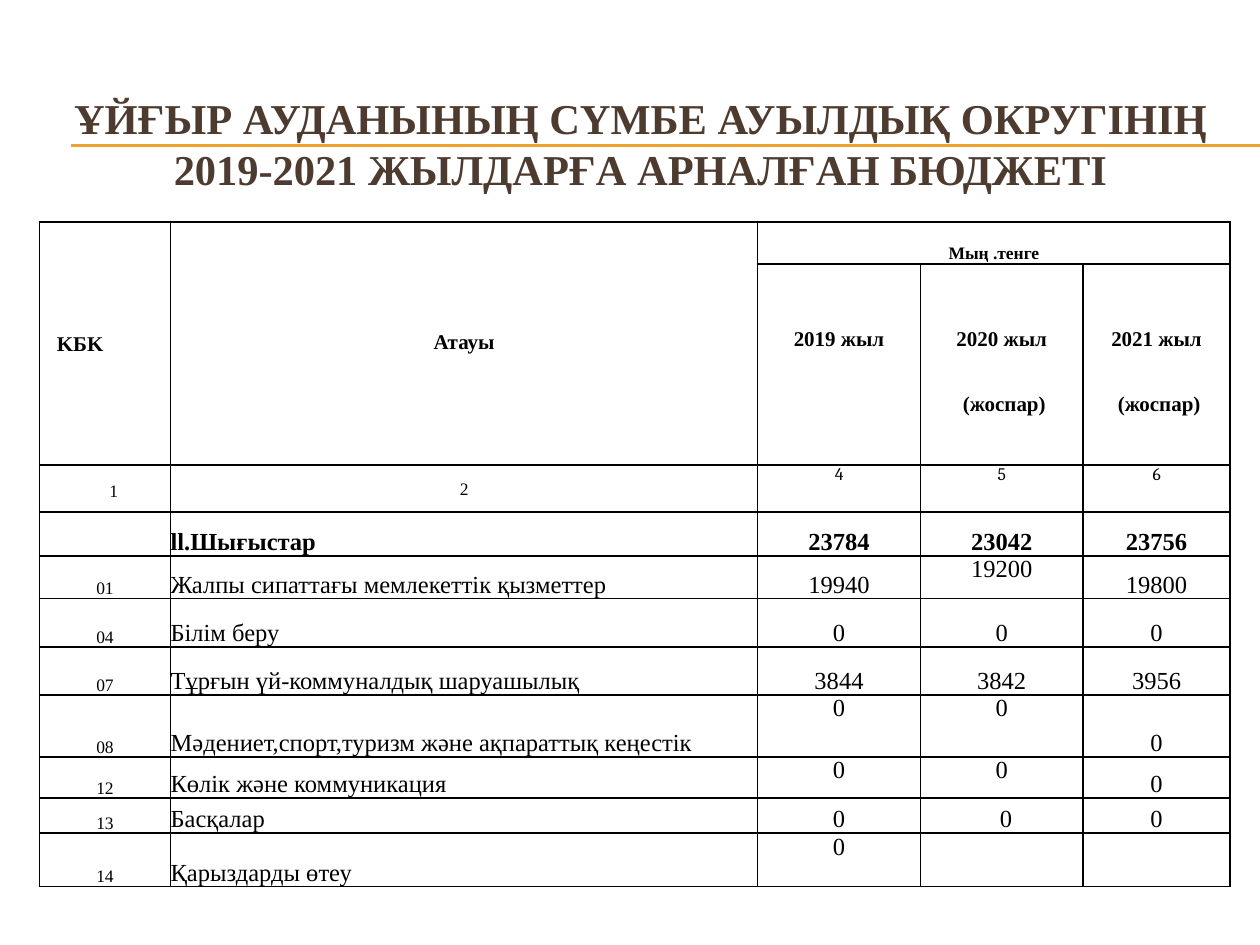
from dataclasses import dataclass

import pptx
import pptx.dml.color
import pptx.enum.shapes
import pptx.enum.text
import pptx.oxml
import pptx.oxml.ns
import pptx.slide
import pptx.table
import pptx.text.text
import pptx.util

Pt = pptx.util.Pt
Align = pptx.enum.text.PP_ALIGN
Anchor = pptx.enum.text.MSO_ANCHOR

COLORS = {"title": "4E3B30", "rule": "F0A22E", "ink": "000000", "paper": "FFFFFF"}
SERIF = "Times New Roman"
COLUMN_WIDTHS = [75, 335.5, 93, 93, 84]
ROW_HEIGHTS = [24, 115, 27, 25, 24.5, 27.5, 27.5, 35.5, 23.5, 20, 30.5]
FIRST_BUDGET_ROW = 3


@dataclass
class CellText:
    lines: tuple[str, ...]
    size: float = 14
    bold: bool = False
    font: str = SERIF
    align: Align = Align.CENTER
    anchor: Anchor = Anchor.BOTTOM
    spacing: float | None = 14
    left: float = 0
    top: float = 0


@dataclass
class BudgetRow:
    code: str
    name: str
    values: tuple[str, ...]
    raised: tuple[int, ...] = ()  # value columns aligned to the cell top
    name_spacing: float = 12
    value_spacing: float = 14
    bold: bool = False


BUDGET = [
    BudgetRow("", "ll.Шығыстар", ("23784", "23042", "23756"),
              name_spacing=15, value_spacing=15, bold=True),
    BudgetRow("01", "Жалпы сипаттағы мемлекеттік қызметтер",
              ("19940", "19200", "19800"), raised=(1,)),
    BudgetRow("04", "Білім беру", ("0", "0", "0")),
    BudgetRow("07", "Тұрғын үй-коммуналдық шаруашылық", ("3844", "3842", "3956")),
    BudgetRow("08", "Мәдениет,спорт,туризм және ақпараттық кеңестік",
              ("0", "0", "0"), raised=(0, 1)),
    BudgetRow("12", "Көлік және коммуникация", ("0", "0", "0"),
              raised=(0, 1), name_spacing=13),
    BudgetRow("13", "Басқалар", ("0", "0", "0")),
    BudgetRow("14", "Қарыздарды өтеу", ("0", "", ""), raised=(0,)),
]


def rgb(name: str) -> pptx.dml.color.RGBColor:
    return pptx.dml.color.RGBColor.from_string(COLORS[name])


def write_text(frame: pptx.text.text.TextFrame, lines: tuple[str, ...], *,
               size: float, color: str = "ink", bold: bool = False,
               font: str = SERIF, align: Align = Align.CENTER,
               spacing: float | None = None, gap: float = 24) -> None:
    """Fill a text frame with one paragraph per line."""
    frame.word_wrap = True
    for index, line in enumerate(lines):
        paragraph = frame.add_paragraph() if index else frame.paragraphs[0]
        paragraph.alignment = align
        if spacing:
            paragraph.line_spacing = Pt(spacing)
        if index:
            paragraph.space_before = Pt(gap)
        run = paragraph.add_run()
        run.text = line
        run.font.name = font
        run.font.size = Pt(size)
        run.font.bold = bold
        run.font.color.rgb = rgb(color)


def style_cell(cell: pptx.table._Cell) -> None:
    """Give a cell thin borders, a plain fill and no margins."""
    properties = cell._tc.get_or_add_tcPr()
    for side in ("lnL", "lnR", "lnT", "lnB"):
        properties.append(pptx.oxml.parse_xml(
            f'<a:{side} {pptx.oxml.ns.nsdecls("a")} w="{Pt(1)}"><a:solidFill>'
            f'<a:srgbClr val="{COLORS["ink"]}"/></a:solidFill></a:{side}>'))
    cell.fill.solid()
    cell.fill.fore_color.rgb = rgb("paper")
    cell.margin_left = cell.margin_right = cell.margin_top = cell.margin_bottom = 0


def fill_cell(cell: pptx.table._Cell, content: CellText) -> None:
    cell.vertical_anchor = content.anchor
    cell.margin_left = Pt(content.left)
    cell.margin_top = Pt(content.top)
    write_text(cell.text_frame, content.lines, size=content.size, bold=content.bold,
               font=content.font, align=content.align, spacing=content.spacing)


def draw_rule(slide: pptx.slide.Slide, y: float) -> None:
    rule = slide.shapes.add_connector(
        pptx.enum.shapes.MSO_CONNECTOR.STRAIGHT, Pt(40.5), Pt(y), Pt(720), Pt(y))
    rule.line.color.rgb = rgb("rule")
    rule.line.width = Pt(0.75)
    rule._element.spPr.append(
        pptx.oxml.parse_xml(f'<a:effectLst {pptx.oxml.ns.nsdecls("a")}/>'))


def draw_title(slide: pptx.slide.Slide) -> None:
    title = slide.shapes.add_textbox(Pt(24), Pt(36), Pt(684), Pt(66))
    title.text_frame.margin_top = Pt(16.5)
    write_text(title.text_frame,
               ("ҰЙҒЫР АУДАНЫНЫҢ СҮМБЕ АУЫЛДЫҚ ОКРУГІНІҢ "
                "2019-2021 ЖЫЛДАРҒА АРНАЛҒАН БЮДЖЕТІ",),
               size=24.3, color="title", bold=True)


def fill_header(table: pptx.table.Table) -> None:
    # Merged headings
    table.cell(0, 0).merge(table.cell(1, 0))
    table.cell(0, 1).merge(table.cell(1, 1))
    table.cell(0, 2).merge(table.cell(0, 4))
    fill_cell(table.cell(0, 0), CellText(("KБK",), 12, True, align=Align.LEFT,
                                         anchor=Anchor.MIDDLE, left=10))
    fill_cell(table.cell(0, 1), CellText(("Атауы",), 12, True,
                                         anchor=Anchor.MIDDLE, spacing=12))
    fill_cell(table.cell(0, 2), CellText(("Мың .тенге",), 10, True, spacing=12))

    # Years
    years = [("2019 жыл",), ("2020 жыл", " (жоспар)"), ("2021 жыл", " (жоспар)")]
    for column, lines in enumerate(years, start=2):
        fill_cell(table.cell(1, column), CellText(lines, 12, True, anchor=Anchor.TOP,
                                                  spacing=13, top=37))

    # Column numbers
    fill_cell(table.cell(2, 0), CellText(("1",), 10, anchor=Anchor.MIDDLE, left=10))
    fill_cell(table.cell(2, 1), CellText(("2",), 10, anchor=Anchor.MIDDLE, spacing=12))
    for column, number in enumerate("456", start=2):
        fill_cell(table.cell(2, column), CellText((number,), 10, font="Cambria",
                                                  anchor=Anchor.TOP, spacing=None))


def fill_budget_row(table: pptx.table.Table, row: int, entry: BudgetRow) -> None:
    if entry.code:
        fill_cell(table.cell(row, 0), CellText((entry.code,), 10))
    fill_cell(table.cell(row, 1), CellText((entry.name,), bold=entry.bold,
                                           align=Align.LEFT, spacing=entry.name_spacing))
    for index, value in enumerate(entry.values):
        if not value:
            continue
        content = CellText((value,), bold=entry.bold, spacing=entry.value_spacing)
        if index in entry.raised:
            content.anchor, content.spacing = Anchor.TOP, None
        if entry.code == "13" and index == 1:
            content.left = 5
        fill_cell(table.cell(row, index + 2), content)


def draw_table(slide: pptx.slide.Slide) -> None:
    table = slide.shapes.add_table(
        len(ROW_HEIGHTS), len(COLUMN_WIDTHS), Pt(22.5), Pt(126.75),
        Pt(sum(COLUMN_WIDTHS)), Pt(sum(ROW_HEIGHTS))).table
    table.first_row = table.horz_banding = False
    for column, width in zip(table.columns, COLUMN_WIDTHS):
        column.width = Pt(width)
    for row, height in zip(table.rows, ROW_HEIGHTS):
        row.height = Pt(height)
    for cell in table.iter_cells():
        style_cell(cell)
    fill_header(table)
    for row, entry in enumerate(BUDGET, start=FIRST_BUDGET_ROW):
        fill_budget_row(table, row, entry)


def main() -> None:
    presentation = pptx.Presentation()
    presentation.slide_width, presentation.slide_height = Pt(720), Pt(540)
    slide = presentation.slides.add_slide(presentation.slide_layouts[6])
    for y in (82.8, 83.5):
        draw_rule(slide, y)
    draw_title(slide)
    draw_table(slide)
    presentation.save("out.pptx")


if __name__ == "__main__":
    main()
